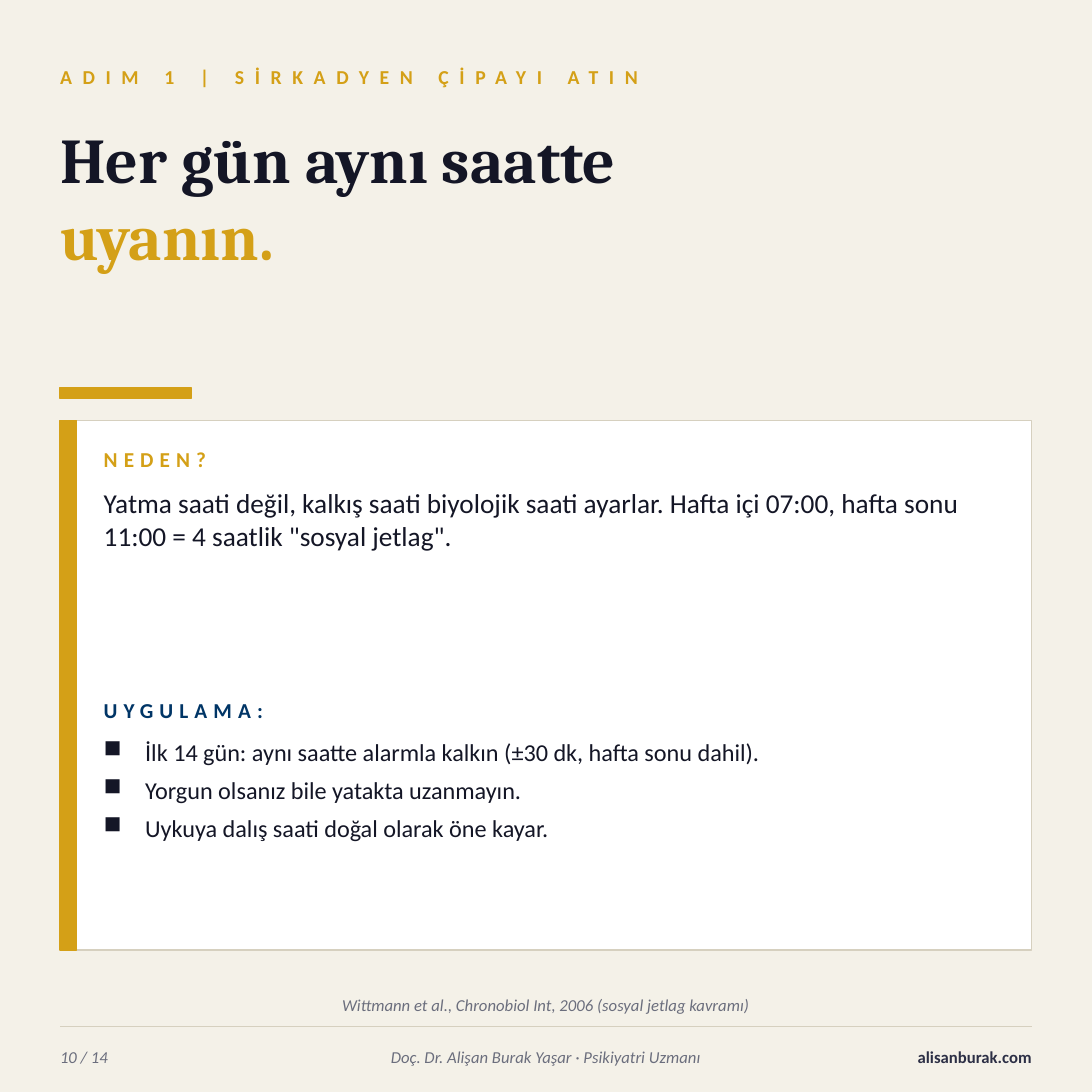
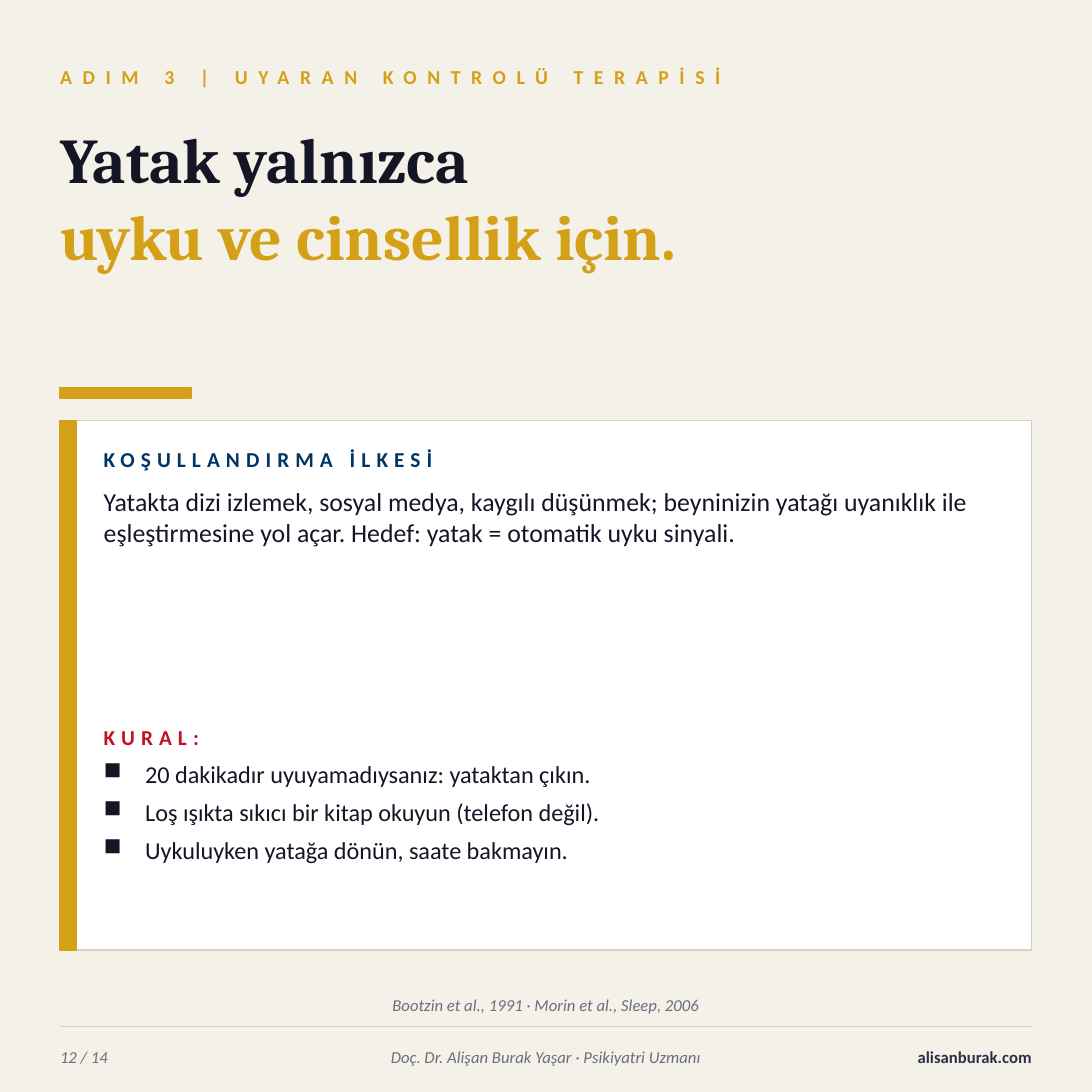
from dataclasses import dataclass

from lxml import etree
from pptx import Presentation
from pptx.dml.color import RGBColor
from pptx.enum.shapes import MSO_CONNECTOR, MSO_SHAPE
from pptx.enum.text import MSO_ANCHOR, MSO_AUTO_SIZE, PP_ALIGN
from pptx.oxml.ns import qn
from pptx.slide import Slide
from pptx.text.text import TextFrame, _Paragraph
from pptx.util import Inches, Pt

LEFT, CENTER, RIGHT = PP_ALIGN.LEFT, PP_ALIGN.CENTER, PP_ALIGN.RIGHT
TOP, MIDDLE = MSO_ANCHOR.TOP, MSO_ANCHOR.MIDDLE
RECTANGLE = MSO_SHAPE.RECTANGLE
STRAIGHT = MSO_CONNECTOR.STRAIGHT
NO_AUTOFIT = MSO_AUTO_SIZE.NONE

CREAM = RGBColor(0xF4, 0xF1, 0xE8)
GOLD = RGBColor(0xD4, 0xA0, 0x17)
INK = RGBColor(0x14, 0x16, 0x26)
WHITE = RGBColor(0xFF, 0xFF, 0xFF)
RULE = RGBColor(0xD6, 0xD0, 0xBF)
NAVY = RGBColor(0x00, 0x35, 0x66)
RED = RGBColor(0xC1, 0x12, 0x1F)
GRAY = RGBColor(0x6B, 0x6E, 0x7D)
SLATE = RGBColor(0x2C, 0x2F, 0x45)

SLIDE_SIZE = 10
MARGIN = 0.55
CONTENT_WIDTH = SLIDE_SIZE - 2 * MARGIN
CARD_TOP, CARD_HEIGHT = 3.85, 4.85
CARD_TEXT_LEFT, CARD_TEXT_WIDTH = 0.95, 8.4
HEADING_HEIGHT = 0.4
CARD_TEXT_BOTTOM = 8.6
FOOTER_TOP, FOOTER_HEIGHT = 9.5, 0.35
BULLET_INDENT = Inches(0.38)
PAGE_COUNT = 14
AUTHOR = "Doç. Dr. Alişan Burak Yaşar · Psikiyatri Uzmanı"
WEBSITE = "alisanburak.com"


@dataclass(frozen=True)
class Box:
    left: float
    top: float
    width: float
    height: float

    def lengths(self) -> tuple[int, int, int, int]:
        return Inches(self.left), Inches(self.top), Inches(self.width), Inches(self.height)


@dataclass(frozen=True)
class TextStyle:
    size: float
    color: RGBColor
    bold: bool = False
    italic: bool = False
    spacing: int = 0
    font: str = "Calibri"


@dataclass(frozen=True)
class Section:
    heading: str
    color: RGBColor
    top: float
    body_top: float
    body_height: float


@dataclass(frozen=True)
class Step:
    page: int
    kicker: str
    title: str
    accent: str
    reason: Section
    reason_text: str
    reason_size: float
    practice: Section
    bullets: tuple[str, ...]
    citation: str


KICKER = TextStyle(13, GOLD, bold=True, spacing=7)
BULLET = TextStyle(16, INK)
NOTE = TextStyle(11, GRAY, italic=True)
SITE = TextStyle(11, SLATE, bold=True)

STEPS = (
    Step(
        10,
        "ADIM 1 | SİRKADYEN ÇİPAYI ATIN",
        "Her gün aynı saatte",
        "uyanın.",
        Section("NEDEN?", GOLD, 4, 4.45, 1.75),
        "Yatma saati değil, kalkış saati biyolojik saati ayarlar. "
        "Hafta içi 07:00, hafta sonu 11:00 = 4 saatlik \"sosyal jetlag\".",
        18,
        Section("UYGULAMA:", NAVY, 6.3, 6.75, CARD_TEXT_BOTTOM - 6.75),
        (
            "İlk 14 gün: aynı saatte alarmla kalkın (±30 dk, hafta sonu dahil).",
            "Yorgun olsanız bile yatakta uzanmayın.",
            "Uykuya dalış saati doğal olarak öne kayar.",
        ),
        "Wittmann et al., Chronobiol Int, 2006 (sosyal jetlag kavramı)",
    ),
    Step(
        12,
        "ADIM 3 | UYARAN KONTROLÜ TERAPİSİ",
        "Yatak yalnızca",
        "uyku ve cinsellik için.",
        Section("KOŞULLANDIRMA İLKESİ", NAVY, 4, 4.45, 2.05),
        "Yatakta dizi izlemek, sosyal medya, kaygılı düşünmek; beyninizin yatağı "
        "uyanıklık ile eşleştirmesine yol açar. Hedef: yatak = otomatik uyku sinyali.",
        17,
        Section("KURAL:", RED, 6.55, 6.95, CARD_TEXT_BOTTOM - 6.95),
        (
            "20 dakikadır uyuyamadıysanız: yataktan çıkın.",
            "Loş ışıkta sıkıcı bir kitap okuyun (telefon değil).",
            "Uykuluyken yatağa dönün, saate bakmayın.",
        ),
        "Bootzin et al., 1991 · Morin et al., Sleep, 2006",
    ),
)


def prepare_frame(frame: TextFrame, anchor: MSO_ANCHOR) -> None:
    frame.word_wrap = True
    frame.auto_size = NO_AUTOFIT
    frame.vertical_anchor = anchor
    frame.margin_left = frame.margin_top = frame.margin_right = frame.margin_bottom = 0


def add_run(paragraph: _Paragraph, text: str, style: TextStyle) -> None:
    run = paragraph.add_run()
    run.text = text
    run.font.name = style.font
    run.font.size = Pt(style.size)
    run.font.bold = style.bold
    run.font.italic = style.italic
    run.font.color.rgb = style.color
    if style.spacing:
        run.font._element.set("spc", str(style.spacing * 100))


def add_text(
    slide: Slide,
    box: Box,
    text: str,
    style: TextStyle,
    align: PP_ALIGN = LEFT,
    anchor: MSO_ANCHOR = MIDDLE,
) -> None:
    frame = slide.shapes.add_textbox(*box.lengths()).text_frame
    prepare_frame(frame, anchor)
    paragraph = frame.paragraphs[0]
    paragraph.alignment = align
    add_run(paragraph, text, style)


def add_title(slide: Slide, step: Step) -> None:
    title = slide.shapes.title
    title.left, title.top, title.width, title.height = Box(
        MARGIN, 1.1, CONTENT_WIDTH, 2.4
    ).lengths()
    frame = title.text_frame
    prepare_frame(frame, TOP)
    for index, (text, color) in enumerate(((step.title, INK), (step.accent, GOLD))):
        paragraph = frame.add_paragraph() if index else frame.paragraphs[0]
        paragraph.alignment = LEFT
        add_run(paragraph, text, TextStyle(42, color, bold=True, font="Cambria"))


def add_rectangle(
    slide: Slide, box: Box, fill: RGBColor, line: RGBColor, line_width: float
) -> None:
    shape = slide.shapes.add_shape(RECTANGLE, *box.lengths())
    shape.shadow.inherit = False
    shape.fill.solid()
    shape.fill.fore_color.rgb = fill
    shape.line.color.rgb = line
    shape.line.width = Pt(line_width)


def add_heading(slide: Slide, section: Section) -> None:
    box = Box(CARD_TEXT_LEFT, section.top, CARD_TEXT_WIDTH, HEADING_HEIGHT)
    add_text(slide, box, section.heading, TextStyle(14, section.color, bold=True, spacing=4))


def body_box(section: Section) -> Box:
    return Box(CARD_TEXT_LEFT, section.body_top, CARD_TEXT_WIDTH, section.body_height)


def add_bullets(slide: Slide, box: Box, bullets: tuple[str, ...]) -> None:
    frame = slide.shapes.add_textbox(*box.lengths()).text_frame
    prepare_frame(frame, TOP)
    for index, text in enumerate(bullets):
        paragraph = frame.add_paragraph() if index else frame.paragraphs[0]
        properties = paragraph._p.get_or_add_pPr()
        properties.set("marL", str(BULLET_INDENT))
        properties.set("indent", str(-BULLET_INDENT))
        etree.SubElement(properties, qn("a:buChar")).set("char", "■")
        if index < len(bullets) - 1:
            paragraph.space_after = Pt(6)
        add_run(paragraph, text, BULLET)


def add_footer(slide: Slide, step: Step) -> None:
    add_text(slide, Box(MARGIN, 9.05, CONTENT_WIDTH, 0.3), step.citation, NOTE, CENTER)
    rule = slide.shapes.add_connector(
        STRAIGHT, Inches(MARGIN), Inches(9.4), Inches(SLIDE_SIZE - MARGIN), Inches(9.4)
    )
    rule.line.color.rgb = RULE
    rule.line.width = Pt(0.75)
    etree.SubElement(rule._element.spPr, qn("a:effectLst"))
    page = f"{step.page} / {PAGE_COUNT}"
    for left, width, text, style, align in (
        (MARGIN, 1.5, page, NOTE, LEFT),
        (2, 6, AUTHOR, NOTE, CENTER),
        (7.6, 1.85, WEBSITE, SITE, RIGHT),
    ):
        add_text(slide, Box(left, FOOTER_TOP, width, FOOTER_HEIGHT), text, style, align)


def add_step(slide: Slide, step: Step) -> None:
    add_text(slide, Box(MARGIN, 0.5, CONTENT_WIDTH, 0.4), step.kicker, KICKER)
    add_title(slide, step)
    add_rectangle(slide, Box(MARGIN, 3.55, 1.2, 0.1), GOLD, GOLD, 1)
    add_rectangle(
        slide, Box(MARGIN, CARD_TOP, CONTENT_WIDTH, CARD_HEIGHT), WHITE, RULE, 0.75
    )
    add_rectangle(slide, Box(MARGIN, CARD_TOP, 0.15, CARD_HEIGHT), GOLD, GOLD, 1)
    add_heading(slide, step.reason)
    reason_style = TextStyle(step.reason_size, INK)
    add_text(slide, body_box(step.reason), step.reason_text, reason_style, anchor=TOP)
    add_heading(slide, step.practice)
    add_bullets(slide, body_box(step.practice), step.bullets)
    add_footer(slide, step)


def main() -> None:
    presentation = Presentation()
    presentation.slide_width = presentation.slide_height = Inches(SLIDE_SIZE)
    background = presentation.slide_master.background.fill
    background.solid()
    background.fore_color.rgb = CREAM
    title_only = presentation.slide_layouts.get_by_name("Title Only")
    for step in STEPS:
        add_step(presentation.slides.add_slide(title_only), step)
    presentation.save("out.pptx")


if __name__ == "__main__":
    main()
